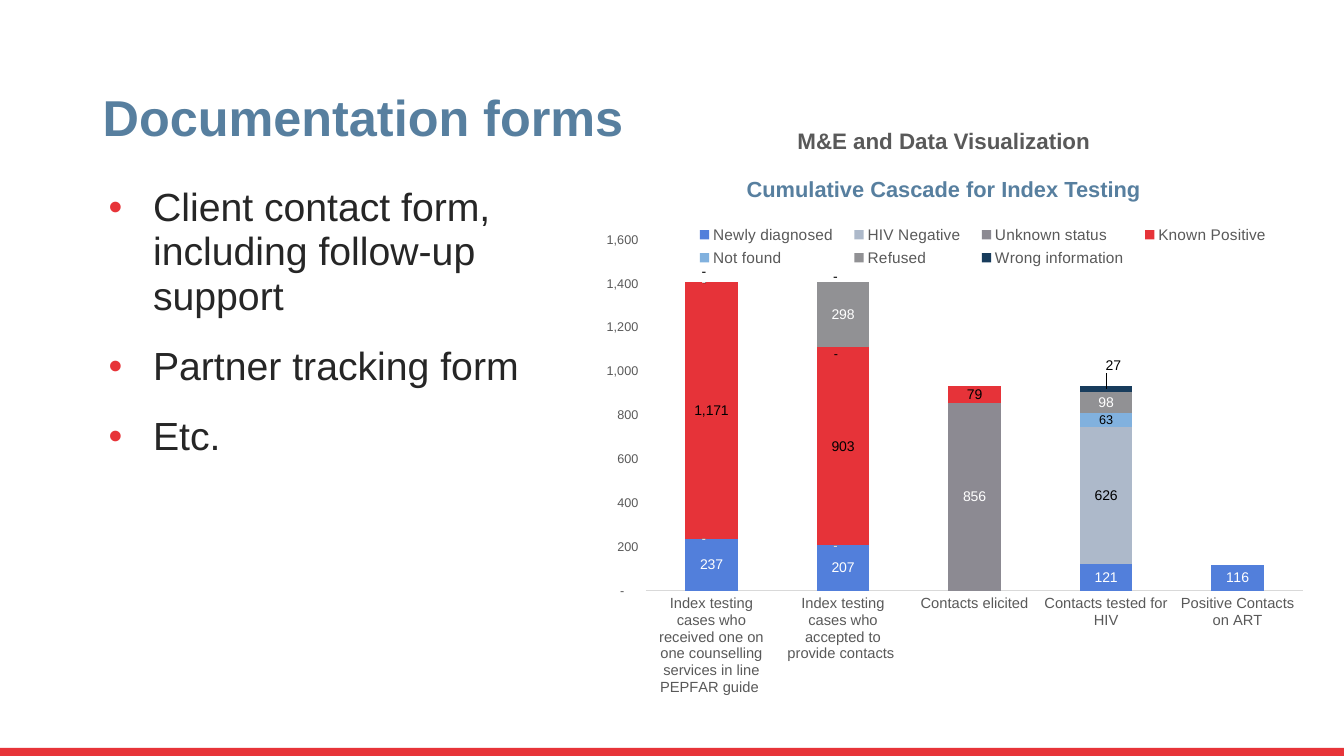
import pptx
import pptx.chart.data
import pptx.dml.color
import pptx.enum.chart
import pptx.enum.shapes
import pptx.enum.text
import pptx.oxml
import pptx.oxml.ns
import pptx.util
from lxml import etree

# Content
TITLE = "Documentation forms"
BULLETS = ["Client contact form, including follow-up support", "Partner tracking form", "Etc."]
CHART_HEADING = "M&E and Data Visualization"
CHART_TITLE = "Cumulative Cascade for Index Testing"
CATEGORIES = [
    "Index testing cases who received one on one counselling services in line PEPFAR guide ",
    "Index testing cases who accepted to provide contacts ",
    "Contacts elicited",
    "Contacts tested for HIV",
    "Positive Contacts on ART",
]
# name, values, fill, label colour, label size
SERIES = [
    ("Newly diagnosed", (237, 207, None, 121, 116), "blue", "white", 10),
    ("HIV Negative", (0, 0, None, 626, None), "pale", "black", 10),
    ("Unknown status", (0, 0, 856, None, None), "slate", "white", 10),
    ("Known Positive", (1171, 903, 79, None, None), "crimson", "black", 10),
    ("Not found", (0, 0, None, 63, None), "sky", "black", 9),
    ("Refused", (0, 298, None, 98, None), "grey", "white", 10),
    ("Wrong information", (0, 0, None, 27, None), "navy", "black", 10),
]
# Moved labels: series -> {point: (x, y) as shares of the chart}
LABEL_SHIFTS = {
    "Not found": {1: (0, 0.014)},
    "Wrong information": {0: (0, -0.02), 1: (0, -0.01), 3: (0.01, -0.045)},
}
NUMBER_FORMAT = '_(* #,##0_);_(* \\(#,##0\\);_(* "-"??_);_('
COLORS = {
    "red": "E73439", "steel": "577F9F", "text": "262626", "muted": "595959",
    "line": "D9D9D9", "white": "FFFFFF", "black": "000000", "blue": "527FDB",
    "pale": "ADB9CA", "slate": "8C8A92", "crimson": "E63339", "sky": "81B1DE",
    "grey": "919194", "navy": "183C5C",
}
FONT = "Arial"

# Geometry in inches
WIDTH, HEIGHT = 13.33, 7.5
LEFT, RIGHT = 0.92, 5.84
HEADING_WIDTH = 7.04
FOOTER_HEIGHT = 0.08
PLOT_AREA = (0.078, 0.098, 0.901, 0.68)
LEGEND_AREA = (0.13, 0.06, 0.82, 0.1)


def color(name):
    return pptx.dml.color.RGBColor.from_string(COLORS[name])


def inches(*lengths):
    return [pptx.util.Inches(length) for length in lengths]


def style_font(font, size, color_name, bold=False):
    font.name, font.size, font.bold = FONT, pptx.util.Pt(size), bold
    font.color.rgb = color(color_name)


def add_text(slide, box, lines, size, color_name, anchor, spacing, bold=False, align="LEFT"):
    frame = slide.shapes.add_textbox(*inches(*box)).text_frame
    frame.word_wrap = True
    frame.vertical_anchor = getattr(pptx.enum.text.MSO_ANCHOR, anchor)
    frame.text = "\n".join(lines)
    for paragraph in frame.paragraphs:
        paragraph.alignment = getattr(pptx.enum.text.PP_ALIGN, align)
        paragraph.line_spacing = spacing
        style_font(paragraph.runs[0].font, size, color_name, bold)
    return frame


def manual_layout(area, inner=False):
    layout = pptx.oxml.parse_xml(
        f'<c:layout {pptx.oxml.ns.nsdecls("c")}><c:manualLayout/></c:layout>')
    entries = [("layoutTarget", "inner")] if inner else []
    if len(area) == 4:
        entries += [("xMode", "edge"), ("yMode", "edge")]
    entries += zip("xywh", area)
    for tag, value in entries:
        etree.SubElement(layout[0], pptx.oxml.ns.qn("c:" + tag), val=str(value))
    return layout


def set_layout(parent, position, layout):
    for old in parent.findall(pptx.oxml.ns.qn("c:layout")):
        parent.remove(old)
    parent.insert(position, layout)


def add_bullets(frame):
    for index, paragraph in enumerate(frame.paragraphs):
        paragraph.space_before = pptx.util.Pt(18 if index else 0)
        properties = paragraph._p.get_or_add_pPr()
        properties.set("marL", str(pptx.util.Inches(0.5)))
        properties.set("indent", str(pptx.util.Inches(-0.44)))
        bullet_color = etree.SubElement(properties, pptx.oxml.ns.qn("a:buClr"))
        etree.SubElement(bullet_color, pptx.oxml.ns.qn("a:srgbClr"), val=COLORS["red"])
        etree.SubElement(properties, pptx.oxml.ns.qn("a:buFont"), typeface=FONT)
        etree.SubElement(properties, pptx.oxml.ns.qn("a:buChar"), char="•")


def style_series(series, fill, label_color, label_size):
    series.format.fill.solid()
    series.format.fill.fore_color.rgb = color(fill)
    center = pptx.enum.chart.XL_LABEL_POSITION.CENTER
    labels = series.data_labels
    labels.show_value = True
    labels.number_format, labels.number_format_is_linked = NUMBER_FORMAT, False
    labels.position = center
    style_font(labels.font, label_size, label_color)
    for point, shift in LABEL_SHIFTS.get(series.name, {}).items():
        label = series.points[point].data_label
        style_font(label.font, label_size, label_color)
        label.position = center
        element = label._dLbl
        set_layout(element, 1, manual_layout(shift))
        number_format = etree.Element(
            pptx.oxml.ns.qn("c:numFmt"), formatCode=NUMBER_FORMAT, sourceLinked="0")
        element.insert(2, number_format)


def add_cascade_chart(slide):
    data = pptx.chart.data.CategoryChartData(number_format=NUMBER_FORMAT)
    data.categories = CATEGORIES
    for name, values, *_ in SERIES:
        data.add_series(name, values)
    chart = slide.shapes.add_chart(
        pptx.enum.chart.XL_CHART_TYPE.COLUMN_STACKED,
        *inches(RIGHT, 1.88, 7.24, 5.12), data).chart
    chart.has_title = False
    style_font(chart.font, 10, "black")
    plot = chart.plots[0]
    plot.gap_width, plot.overlap, plot.vary_by_categories = 150, 100, False
    for series, (_, _, *style) in zip(plot.series, SERIES):
        style_series(series, *style)

    # Axes
    for axis, size in ((chart.category_axis, 10.5), (chart.value_axis, 9)):
        axis.has_major_gridlines = False
        axis.major_tick_mark = axis.minor_tick_mark = pptx.enum.chart.XL_TICK_MARK.NONE
        style_font(axis.tick_labels.font, size, "muted")
    chart.category_axis.format.line.color.rgb = color("line")
    chart.category_axis.format.line.width = pptx.util.Pt(0.75)
    value_axis = chart.value_axis
    value_axis.format.line.fill.background()
    value_axis.minimum_scale, value_axis.maximum_scale, value_axis.major_unit = 0, 1600, 200
    value_axis.tick_labels.number_format = NUMBER_FORMAT
    value_axis.tick_labels.number_format_is_linked = False

    # Legend and plot placement
    chart.has_legend = True
    chart.legend.position = pptx.enum.chart.XL_LEGEND_POSITION.TOP
    chart.legend.include_in_layout = False
    style_font(chart.legend.font, 11, "muted")
    set_layout(chart.legend._element, 1, manual_layout(LEGEND_AREA))
    plot_area = chart._chartSpace.chart.plotArea
    set_layout(plot_area, 0, manual_layout(PLOT_AREA, inner=True))


def main():
    presentation = pptx.Presentation()
    presentation.slide_width, presentation.slide_height = inches(WIDTH, HEIGHT)
    slide = presentation.slides.add_slide(presentation.slide_layouts[6])

    # Footer band
    band = slide.shapes.add_shape(
        pptx.enum.shapes.MSO_SHAPE.RECTANGLE,
        *inches(0, HEIGHT - FOOTER_HEIGHT, WIDTH, FOOTER_HEIGHT))
    band.shadow.inherit = False
    band.fill.solid()
    band.fill.fore_color.rgb = color("red")
    band.line.fill.background()

    # Title and bullets
    add_text(slide, (LEFT, 0.64, 11.5, 0.87), [TITLE], 36, "steel", "BOTTOM", 0.9, True)
    add_bullets(add_text(slide, (LEFT, 1.79, 4.46, 5.39), BULLETS, 28, "text", "TOP", 0.95))

    # Chart with its headings
    add_text(slide, (RIGHT, 1.14, HEADING_WIDTH, 0.55), [CHART_HEADING],
             16, "muted", "MIDDLE", 0.9, True, "CENTER")
    add_cascade_chart(slide)
    add_text(slide, (RIGHT, 1.73, HEADING_WIDTH, 0.32), [CHART_TITLE],
             15.6, "steel", "BOTTOM", 0.8, True, "CENTER")
    presentation.save("out.pptx")


if __name__ == "__main__":
    main()
